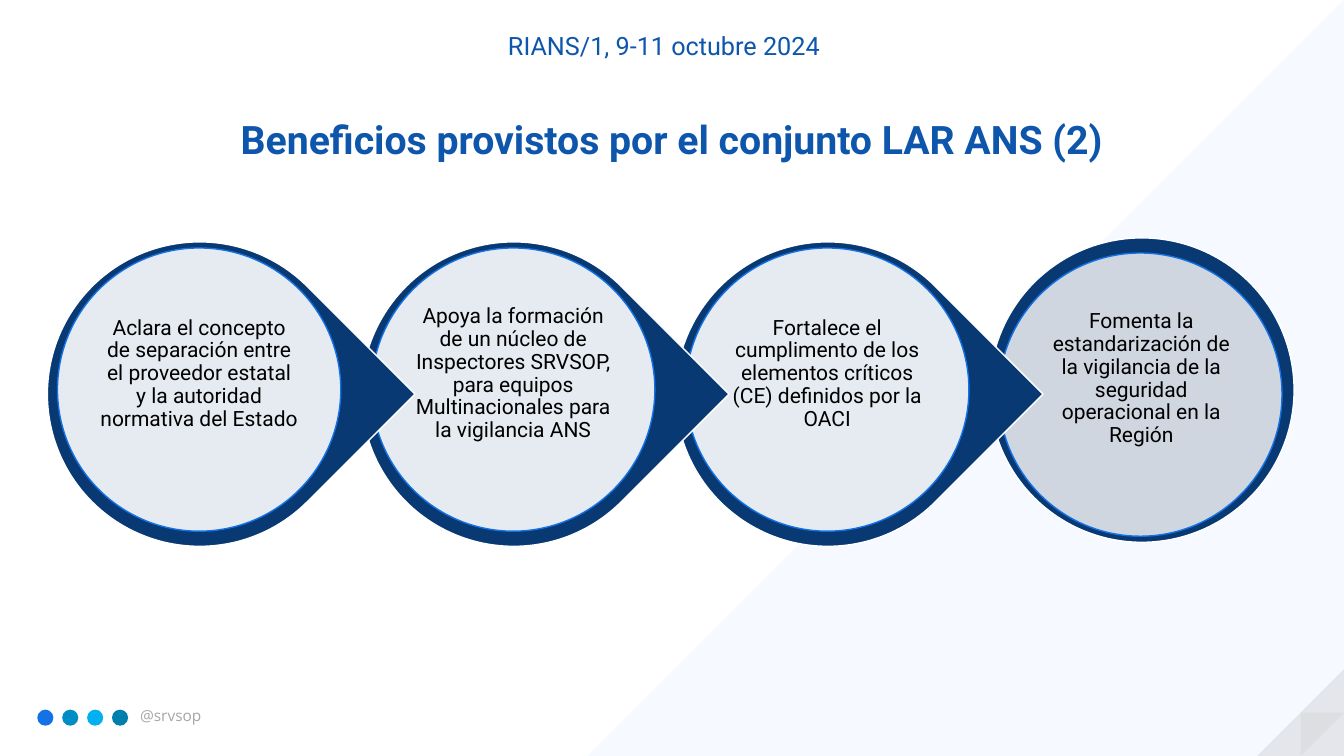
from lxml import etree
from pptx import Presentation
from pptx.dml.color import RGBColor
from pptx.enum.shapes import MSO_SHAPE
from pptx.enum.text import MSO_ANCHOR, MSO_AUTO_SIZE, PP_ALIGN
from pptx.oxml.ns import qn
from pptx.util import Inches, Pt

OVAL, DROP, WEDGE = MSO_SHAPE.OVAL, MSO_SHAPE.TEAR, MSO_SHAPE.RIGHT_TRIANGLE
TOP, MIDDLE = MSO_ANCHOR.TOP, MSO_ANCHOR.MIDDLE
LEFT, CENTER = PP_ALIGN.LEFT, PP_ALIGN.CENTER
FIXED = MSO_AUTO_SIZE.NONE

WHITE = RGBColor(0xFF, 0xFF, 0xFF)
BLACK = RGBColor(0, 0, 0)
NAVY = RGBColor(0x09, 0x39, 0x73)
BLUE = RGBColor(0x0E, 0x55, 0xAC)
BRIGHT = RGBColor(0x13, 0x72, 0xE6)
PALE = RGBColor(0xF6, 0xF9, 0xFF)
STEEL = RGBColor(0xCF, 0xD6, 0xE0)
GRAY = RGBColor(0xA6, 0xA6, 0xA6)
SILVER = RGBColor(0xBF, 0xBF, 0xBF)
CYAN = RGBColor(0x00, 0xB0, 0xF0)
TEAL = RGBColor(0x00, 0x8D, 0xC3)
DEEP = RGBColor(0x00, 0x7E, 0xAE)

STEP = 3.115
BENEFITS = [
    "Aclara el concepto de separación entre el proveedor estatal y la autoridad normativa del Estado",
    "Apoya la formación de un núcleo de Inspectores SRVSOP, para equipos Multinacionales para la vigilancia ANS",
    "Fortalece el cumplimento de los elementos críticos (CE) definidos por la OACI",
    "Fomenta la estandarización de la vigilancia de la seguridad operacional en la Región",
]

deck = Presentation()
deck.slide_width, deck.slide_height = Inches(13.33), Inches(7.5)
slide = deck.slides.add_slide(deck.slide_layouts[5])
shapes = slide.shapes


def draw(kind, x, y, size, color, edge=None, alpha=100):
    shape = shapes.add_shape(kind, Inches(x), Inches(y), Inches(size), Inches(size))
    shape.shadow.inherit = False
    shape.fill.solid()
    shape.fill.fore_color.rgb = color
    if alpha < 100:
        tint = shape._element.spPr.find(".//" + qn("a:srgbClr"))
        etree.SubElement(tint, qn("a:alpha")).set("val", str(alpha * 1000))
    if edge is None:
        shape.line.fill.background()
    else:
        shape.line.color.rgb = edge
        shape.line.width = Pt(1)
    return shape


def write(box, text, size, color, font="Roboto", align=CENTER, anchor=TOP):
    frame = box.text_frame
    frame.word_wrap = True
    frame.auto_size = FIXED
    frame.vertical_anchor = anchor
    frame.text = text
    line = frame.paragraphs[0]
    line.alignment = align
    line.font.size = Pt(size)
    line.font.name = font
    line.font.color.rgb = color
    return line


for x, y, size, color, alpha, flip in [
    (5.83, 0, 7.5, PALE, 100, "flipH"),
    (12.47, 6.64, 0.86, GRAY, 22, "flipH"),
    (12.9, 7.07, 0.43, SILVER, 20, "flipV"),
]:
    wedge = draw(WEDGE, x, y, size, color, alpha=alpha)
    wedge._element.spPr.xfrm.set(flip, "1")

for i, color in enumerate([BRIGHT, TEAL, CYAN, DEEP]):
    draw(OVAL, 0.37 + i * 0.247, 7.04, 0.16, color)

handle = shapes.add_textbox(Inches(1.29), Inches(6.96), Inches(1.49), Inches(0.29))
write(handle, "@srvsop", 11, GRAY, "Open Sans", LEFT)

event = shapes.add_textbox(Inches(3.59), Inches(0.25), Inches(5.99), Inches(0.4))
write(event, "RIANS/1, 9-11 octubre 2024", 18, BLUE)

title = shapes.title
title.left, title.top = Inches(1.01), Inches(1.09)
title.width, title.height = Inches(11.3), Inches(0.57)
write(title, "Beneficios provistos por el conjunto LAR ANS (2)", 28, BLUE).font.bold = True
shapes._spTree.append(title._element)

for i, text in reversed(list(enumerate(BENEFITS))):
    x = 0.47 + i * STEP
    if i == len(BENEFITS) - 1:
        y = 2.51
        draw(OVAL, x, 2.36, 3.02, NAVY, WHITE)
        draw(OVAL, x + 0.09, y, 2.81, STEEL, BRIGHT)
    else:
        y = 2.46
        drop = draw(DROP, x, 2.4, 3.02, NAVY, WHITE)
        drop.rotation = 45
        draw(OVAL, x + 0.1, y, 2.81, WHITE, BRIGHT, 90)
    box = shapes.add_textbox(Inches(x + 0.5), Inches(y + 0.4), Inches(2.01), Inches(1.7))
    frame = box.text_frame
    frame.margin_left = frame.margin_right = Inches(0.02)
    frame.margin_top = frame.margin_bottom = Inches(0.02)
    write(box, text, 15, BLACK, anchor=MIDDLE).line_spacing = 0.9

deck.save("out.pptx")
